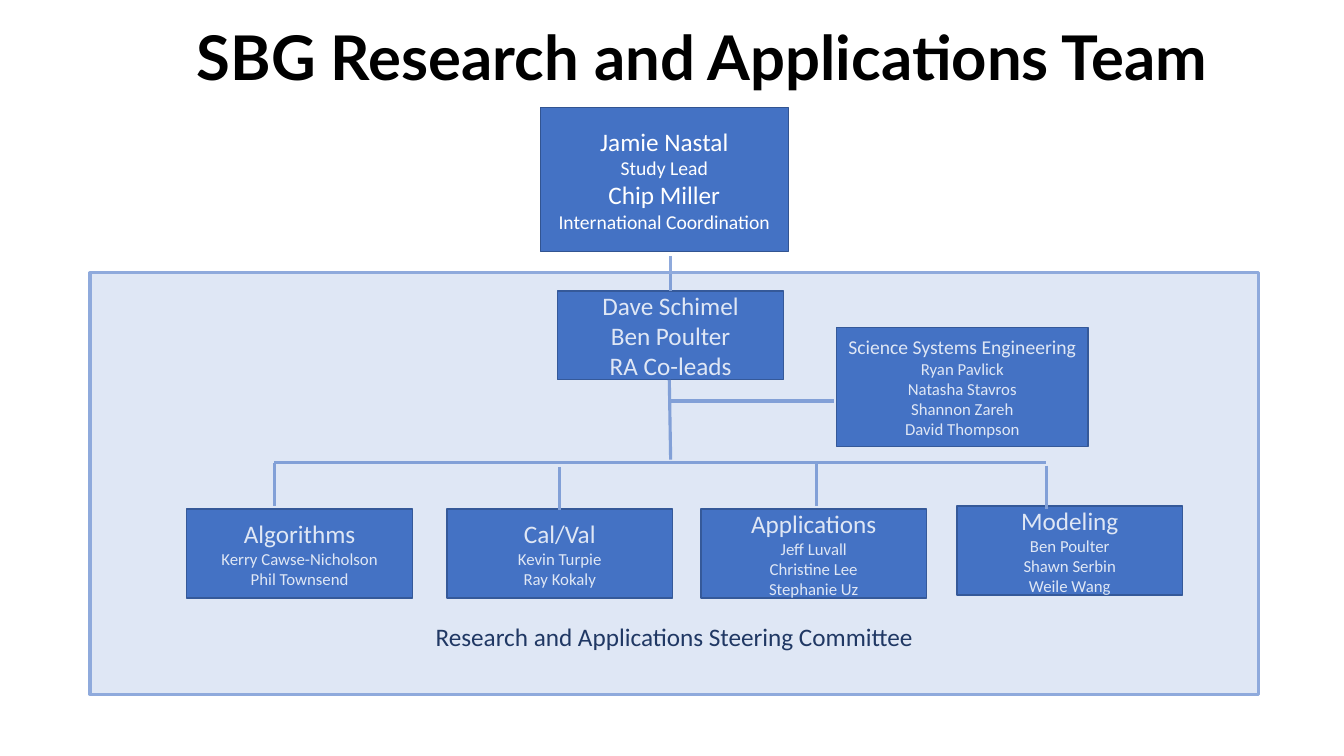
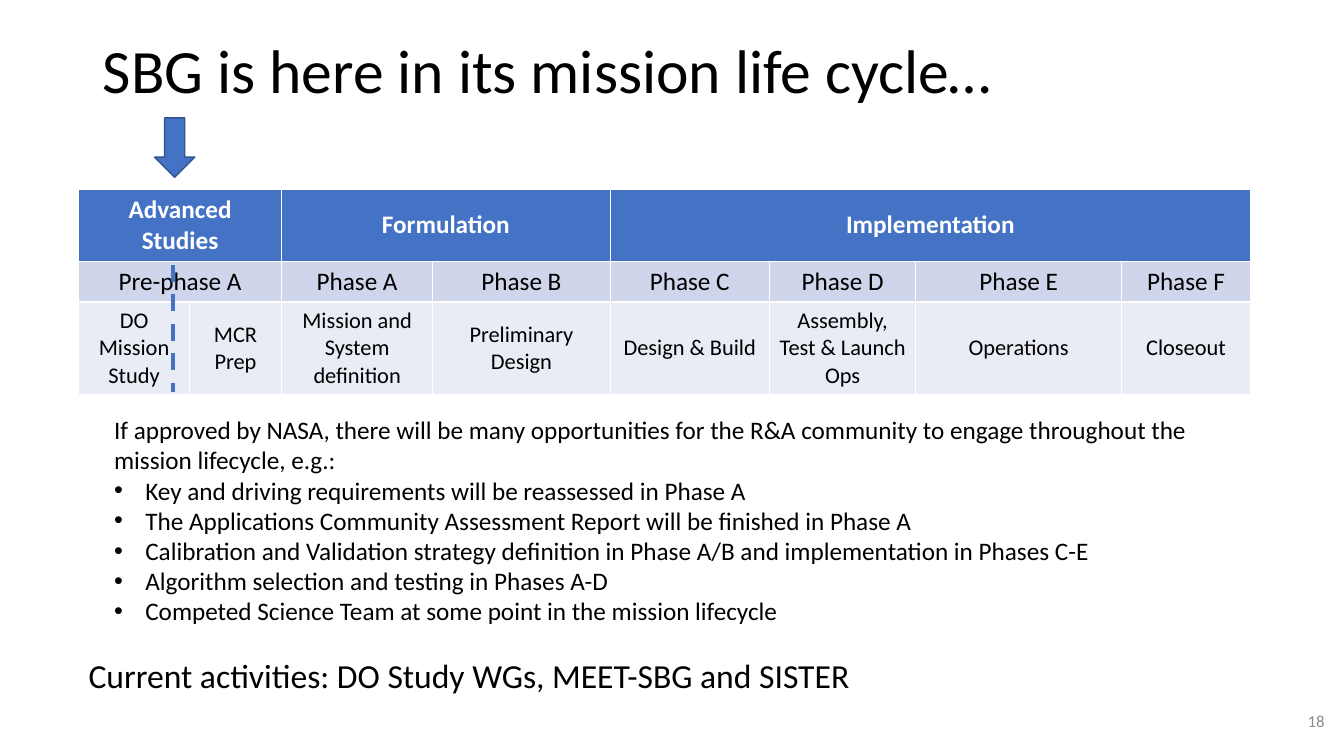
from lxml.etree import SubElement
from pptx import Presentation
from pptx.dml.color import RGBColor
from pptx.enum.dml import MSO_LINE
from pptx.enum.shapes import MSO_CONNECTOR, MSO_SHAPE
from pptx.enum.text import MSO_ANCHOR as Anchor, MSO_AUTO_SIZE, PP_ALIGN as Align
from pptx.oxml.ns import qn
from pptx.util import Inches, Pt

BLUE = RGBColor(0x44, 0x72, 0xC4)
DARK_BLUE = RGBColor(0x32, 0x54, 0x91)
PALE_BLUE = RGBColor(0x8F, 0xAA, 0xDC)
NAVY = RGBColor(0x20, 0x38, 0x64)
BAND = RGBColor(0xCF, 0xD5, 0xEA)
LIGHT_BAND = RGBColor(0xE9, 0xEB, 0xF5)
GREY = RGBColor(0x8C, 0x8C, 0x8C)
BLACK = RGBColor(0, 0, 0)
WHITE = RGBColor(0xFF, 0xFF, 0xFF)

deck = Presentation()
deck.slide_width, deck.slide_height = Inches(13.33), Inches(7.5)
COLUMN, ROW = deck.slide_width / 100, deck.slide_height / 100


def grid(*lengths):
    return [int(length * (ROW if i % 2 else COLUMN)) for i, length in enumerate(lengths)]


def write(frame, lines, color, align=Align.LEFT, anchor=Anchor.TOP, font="Calibri", bold=False):
    frame.word_wrap = True
    frame.vertical_anchor = anchor
    for i, (text, size) in enumerate(lines):
        para = frame.add_paragraph() if i else frame.paragraphs[0]
        para.alignment = align
        span = para.add_run()
        span.text = text
        span.font.name, span.font.size, span.font.bold = font, Pt(size), bold
        span.font.color.rgb = color


titles = [
    ("SBG Research and Applications Team", "Lato", True, 13.9, -1.7),
    ("SBG is here in its mission life cycle…", "Calibri", False, 6.9, 0),
]
for text, font, bold, left, top in titles:
    page = deck.slides.add_slide(deck.slide_layouts[5])
    title = page.shapes.title
    title.left, title.top, title.width, title.height = grid(left, top, 86.25, 19.33)
    write(title.text_frame, [(text, 44)], BLACK, anchor=Anchor.MIDDLE, font=font, bold=bold)
    title.text_frame.auto_size = MSO_AUTO_SIZE.NONE
    title.text_frame.paragraphs[0].line_spacing = 0.9
team_page, cycle_page = deck.slides

TEAM_SIZE = (16.8, 11.75)
boxes = [
    ((62.25, 43.33, 18.7, 15.75), [("Science Systems Engineering", 14), ("Ryan Pavlick", 12),
                                   ("Natasha Stavros", 12), ("Shannon Zareh", 12),
                                   ("David Thompson", 12)]),
    ((40.2, 14.25, 18.45, 19.05), [("Jamie Nastal", 18), ("Study Lead", 14),
                                   ("Chip Miller", 18), ("International Coordination", 14)]),
    ((41.5, 38.5, *TEAM_SIZE), [("Dave Schimel", 18), ("Ben Poulter", 18), ("RA Co-leads", 18)]),
]
teams = [
    (13.9, 67.35, "Algorithms", ["Kerry Cawse-Nicholson", "Phil Townsend"]),
    (33.25, 67.35, "Cal/Val", ["Kevin Turpie", "Ray Kokaly"]),
    (52.15, 67.35, "Applications", ["Jeff Luvall", "Christine Lee", "Stephanie Uz"]),
    (71.2, 66.95, "Modeling", ["Ben Poulter", "Shawn Serbin", "Weile Wang"]),
]
for left, top, name, members in teams:
    boxes.append(((left, top, *TEAM_SIZE), [(name, 18)] + [(member, 12) for member in members]))

shapes = [(team_page, MSO_SHAPE.RECTANGLE, place, lines) for place, lines in boxes]
shapes.append((cycle_page, MSO_SHAPE.DOWN_ARROW, (11.5, 15.6, 3, 7.85), []))
for page, kind, place, lines in shapes:
    box = page.shapes.add_shape(kind, *grid(*place))
    box.shadow.inherit = False
    box.fill.solid()
    box.fill.fore_color.rgb = BLUE
    box.line.color.rgb = DARK_BLUE
    box.line.width = Pt(1)
    write(box.text_frame, lines, WHITE, Align.CENTER, Anchor.MIDDLE)

table_columns = [8.25, 6.85, 11.25, 13.2, 11.85, 10.9, 15.3, 9.6]
table_rows = [9.5, 5.4, 12.2]
table = cycle_page.shapes.add_table(
    len(table_rows), len(table_columns), *grid(5.85, 25.05, sum(table_columns), sum(table_rows))
).table
for column, width in zip(table.columns, table_columns):
    column.width = int(width * COLUMN)
for row, height in zip(table.rows, table_rows):
    row.height = int(height * ROW)

table_text = [
    (BLUE, WHITE, 18, [("Advanced Studies", 2), ("Formulation", 2), ("Implementation", 4)]),
    (BAND, BLACK, 18, [("Pre-phase A", 2)] + [(f"Phase {letter}", 1) for letter in "ABCDEF"]),
    (LIGHT_BAND, BLACK, 16, [(text, 1) for text in (
        "DO Mission Study", "MCR Prep", "Mission and System definition", "Preliminary Design",
        "Design & Build", "Assembly, Test & Launch Ops", "Operations", "Closeout")]),
]
for r, (fill, color, size, entries) in enumerate(table_text):
    c = 0
    for text, width in entries:
        cell = table.cell(r, c)
        if width > 1:
            cell.merge(table.cell(r, c + width - 1))
        cell.fill.solid()
        cell.fill.fore_color.rgb = fill
        write(cell.text_frame, [(text, size)], color, Align.CENTER, bold=r == 0)
        cell.vertical_anchor = Anchor.MIDDLE
        c += width

org_lines = [
    (20.4, 61.2, 77.85, 61.2),
    (20.4, 61.2, 20.4, 66.95),
    (41.65, 61.75, 41.65, 67.45),
    (60.75, 61.2, 60.75, 66.95),
    (77.85, 61.6, 77.85, 67.35),
    (49.9, 33.85, 49.9, 38.5),
    (49.8, 50.25, 49.9, 60.8),
    (62.05, 53.05, 49.8, 53.05),
]
lines = [(team_page, ends, PALE_BLUE, 2.25, MSO_LINE.SOLID) for ends in org_lines]
lines.append((cycle_page, (12.9, 35.05, 12.9, 51.85), BLUE, 3, MSO_LINE.DASH))
for page, ends, color, width, dash in lines:
    line = page.shapes.add_connector(MSO_CONNECTOR.STRAIGHT, *grid(*ends))
    line.line.color.rgb = color
    line.line.width = Pt(width)
    line.line.dash_style = dash
    SubElement(line._element.spPr, qn("a:effectLst"))

panel = team_page.shapes.add_shape(MSO_SHAPE.RECTANGLE, *grid(6.7, 36.1, 86.95, 55.75))
panel.shadow.inherit = False
panel.fill.solid()
panel.fill.fore_color.rgb = BLUE
tint = panel._element.spPr.find(qn("a:solidFill"))[0]
SubElement(tint, qn("a:alpha"), val="17000")
panel.line.color.rgb = PALE_BLUE
panel.line.width = Pt(2.25)
panel.text_frame.margin_bottom = int(5.6 * ROW)
write(panel.text_frame, [("Research and Applications Steering Committee", 18)], NAVY,
      Align.CENTER, Anchor.BOTTOM)

opportunities = [
    "If approved by NASA, there will be many opportunities for the R&A community to engage "
    "throughout the mission lifecycle, e.g.:",
    "Key and driving requirements will be reassessed in Phase A",
    "The Applications Community Assessment Report will be finished in Phase A",
    "Calibration and Validation strategy definition in Phase A/B and implementation in Phases C-E",
    "Algorithm selection and testing in Phases A-D",
    "Competed Science Team at some point in the mission lifecycle",
]
body = cycle_page.shapes.add_textbox(*grid(7.75, 54.15, 83.55, 29.6)).text_frame
write(body, [(text, 18) for text in opportunities], BLACK)
for para in body.paragraphs[1:]:
    properties = para._p.get_or_add_pPr()
    properties.set("marL", str(Inches(0.31)))
    properties.set("indent", str(-Inches(0.31)))
    SubElement(properties, qn("a:buFont"), typeface="Arial")
    SubElement(properties, qn("a:buChar"), char="•")

activities = cycle_page.shapes.add_textbox(*grid(5.85, 86, 83.8, 6.65))
write(activities.text_frame, [("Current activities: DO Study WGs, MEET-SBG and SISTER", 24)], BLACK)
page_number = cycle_page.shapes.add_textbox(*grid(76.8, 92.65, 22.5, 5.35))
write(page_number.text_frame, [("18", 12)], GREY, Align.RIGHT, Anchor.MIDDLE)

deck.save("out.pptx")
